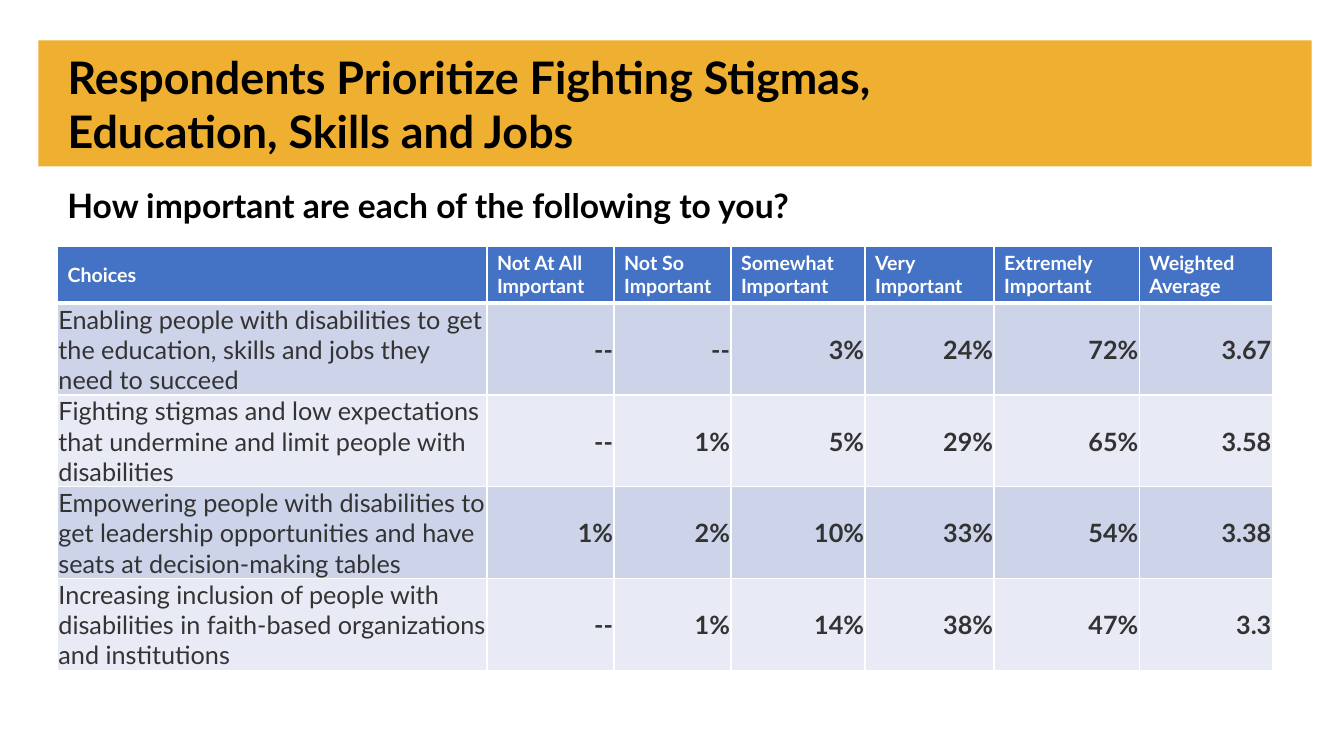
from lxml import etree
from pptx import Presentation
from pptx import util as u
from pptx.dml.color import RGBColor
from pptx.enum import shapes, text
from pptx.oxml import ns

GOLD = RGBColor(0xEF, 0xAF, 0x30)
BLUE = RGBColor(0x44, 0x72, 0xC4)
BAND_DARK = RGBColor(0xCD, 0xD4, 0xEA)
BAND_LIGHT = RGBColor(0xE8, 0xEB, 0xF5)
WHITE = RGBColor(0xFF, 0xFF, 0xFF)
BLACK = RGBColor(0, 0, 0)
GREY = RGBColor(0x33, 0x33, 0x33)

HEADINGS = ["Choices", "Not At All Important", "Not So Important", "Somewhat Important",
            "Very Important", "Extremely Important", "Weighted Average"]
RATINGS = [
    ["Enabling people with disabilities to get the education, skills and jobs they need to succeed",
     "--", "--", "3%", "24%", "72%", "3.67"],
    ["Fighting stigmas and low expectations that undermine and limit people with disabilities",
     "--", "1%", "5%", "29%", "65%", "3.58"],
    ["Empowering people with disabilities to get leadership opportunities and have seats at "
     "decision-making tables",
     "1%", "2%", "10%", "33%", "54%", "3.38"],
    ["Increasing inclusion of people with disabilities in faith-based organizations and institutions",
     "--", "1%", "14%", "38%", "47%", "3.3"],
]
COLUMN_WIDTHS = [4.26, 1.26, 1.16, 1.33, 1.28, 1.44, 1.32]
HEADER_HEIGHT, ROW_HEIGHT = 0.56, 0.91


def write(frame, words, size, color, bold=True, align=text.PP_ALIGN.LEFT):
    frame.word_wrap = True
    para = frame.paragraphs[0]
    para.text = words
    para.alignment = align
    for font in [para.font] + [span.font for span in para.runs]:
        font.name = "Lato"
        font.size = u.Pt(size)
        font.bold = bold
        font.color.rgb = color


def add_title(page, left, top, width, height):
    band = page.shapes.add_shape(shapes.MSO_SHAPE.RECTANGLE, u.Inches(left), u.Inches(top),
                                 u.Inches(width), u.Inches(height))
    band.shadow.inherit = False
    band.fill.solid()
    band.fill.fore_color.rgb = GOLD
    band.line.fill.background()

    title = page.shapes.title
    title.element.addprevious(band.element)
    title.left, title.top = u.Inches(left + 0.19), u.Inches(top)
    title.width, title.height = u.Inches(width + 0.6), u.Inches(height)
    frame = title.text_frame
    frame.auto_size = text.MSO_AUTO_SIZE.NONE
    frame.vertical_anchor = text.MSO_ANCHOR.MIDDLE
    write(frame, "Respondents Prioritize Fighting Stigmas,\vEducation, Skills and Jobs", 32, BLACK)


def add_question(page, left, top, width, height):
    box = page.shapes.add_textbox(u.Inches(left), u.Inches(top), u.Inches(width), u.Inches(height))
    write(box.text_frame, "How important are each of the following to you?", 24, BLACK)


def style_cell(cell, fill, bottom_width=1):
    """Give the cell white borders, then its fill, which must follow them in the XML."""
    properties = cell._tc.get_or_add_tcPr()
    for side, points in (("L", 1), ("R", 1), ("T", 1), ("B", bottom_width)):
        line = etree.SubElement(properties, ns.qn(f"a:ln{side}"), w=str(u.Pt(points)))
        paint = etree.SubElement(line, ns.qn("a:solidFill"))
        etree.SubElement(paint, ns.qn("a:srgbClr"), val=str(WHITE))
    cell.fill.solid()
    cell.fill.fore_color.rgb = fill
    cell.vertical_anchor = text.MSO_ANCHOR.MIDDLE


def add_ratings(page, left, top):
    height = HEADER_HEIGHT + ROW_HEIGHT * len(RATINGS)
    table = page.shapes.add_table(len(RATINGS) + 1, len(HEADINGS), u.Inches(left), u.Inches(top),
                                  u.Inches(sum(COLUMN_WIDTHS)), u.Inches(height)).table
    table.horz_banding = False
    for column, width in zip(table.columns, COLUMN_WIDTHS):
        column.width = u.Inches(width)

    table.rows[0].height = u.Inches(HEADER_HEIGHT)
    for col, heading in enumerate(HEADINGS):
        cell = table.cell(0, col)
        style_cell(cell, BLUE, bottom_width=3)
        write(cell.text_frame, heading, 14, WHITE)

    for row, values in enumerate(RATINGS, start=1):
        table.rows[row].height = u.Inches(ROW_HEIGHT)
        for col, value in enumerate(values):
            cell = table.cell(row, col)
            style_cell(cell, BAND_DARK if row % 2 else BAND_LIGHT)
            cell.margin_left = cell.margin_right = cell.margin_top = u.Inches(0.01)
            cell.margin_bottom = 0
            write(cell.text_frame, value, 18, GREY, bold=col > 0,
                  align=text.PP_ALIGN.RIGHT if col else text.PP_ALIGN.LEFT)


def main():
    deck = Presentation()
    deck.slide_width, deck.slide_height = u.Inches(13.33), u.Inches(7.5)
    page = deck.slides.add_slide(deck.slide_layouts.get_by_name("Title Only"))
    add_title(page, 0.38, 0.4, 12.63, 1.25)
    add_question(page, 0.57, 1.79, 10.84, 0.5)
    add_ratings(page, 0.57, 2.44)
    deck.save("out.pptx")


if __name__ == "__main__":
    main()
